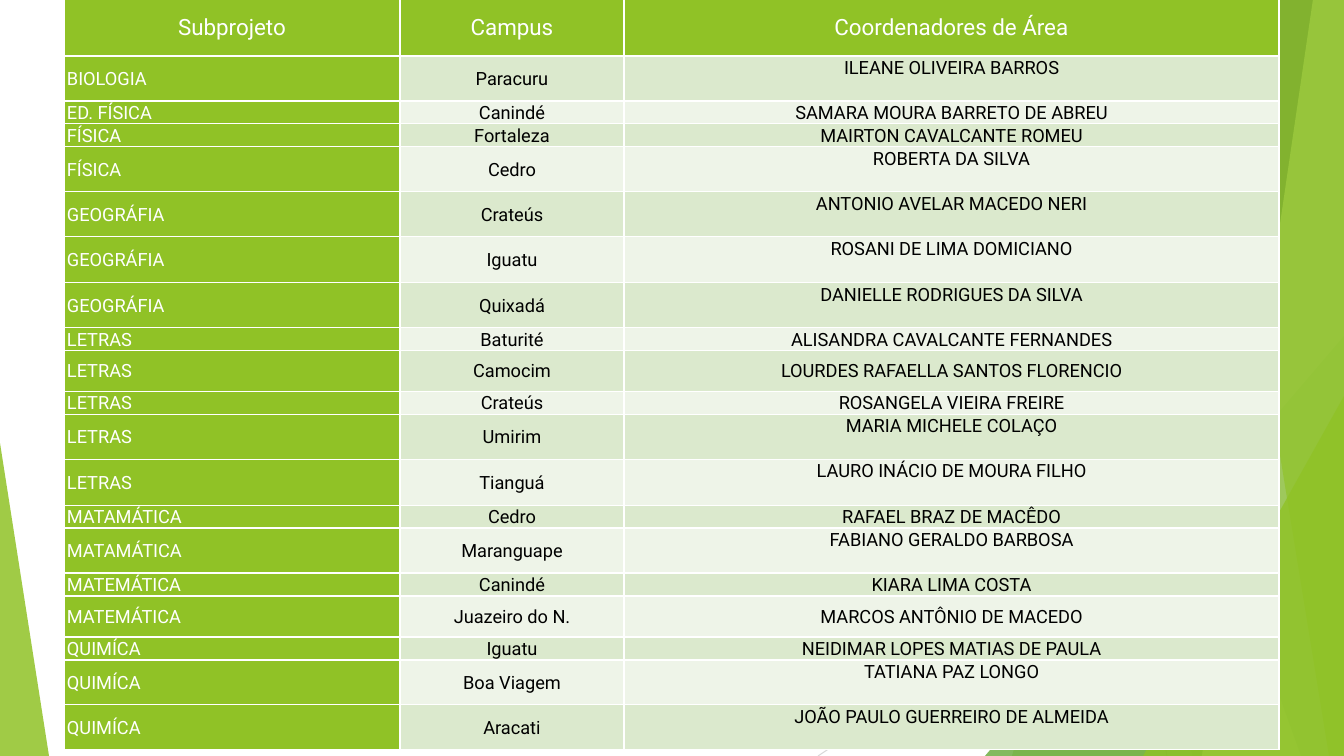
"""Build the slide listing subprojects, campuses and area coordinators."""
from lxml.etree import SubElement
from pptx import Presentation
from pptx.dml.color import RGBColor
from pptx.enum.shapes import MSO_CONNECTOR as Connector, MSO_SHAPE as Shape
from pptx.enum.text import MSO_ANCHOR as Anchor, PP_ALIGN as Align
from pptx.oxml.ns import qn
from pptx.util import Pt

HEADER = ("Subprojeto", "Campus", "Coordenadores de Área")
ROWS = [
    ("BIOLOGIA", "Paracuru", "ILEANE OLIVEIRA BARROS"),
    ("ED. FÍSICA", "Canindé", "SAMARA MOURA BARRETO DE ABREU"),
    ("FÍSICA", "Fortaleza", "MAIRTON CAVALCANTE ROMEU"),
    ("FÍSICA", "Cedro", "ROBERTA DA SILVA"),
    ("GEOGRÁFIA", "Crateús", "ANTONIO AVELAR MACEDO NERI"),
    ("GEOGRÁFIA", "Iguatu", "ROSANI DE LIMA DOMICIANO"),
    ("GEOGRÁFIA", "Quixadá", "DANIELLE RODRIGUES DA SILVA"),
    ("LETRAS", "Baturité", "ALISANDRA CAVALCANTE FERNANDES"),
    ("LETRAS", "Camocim", "LOURDES RAFAELLA SANTOS FLORENCIO"),
    ("LETRAS", "Crateús", "ROSANGELA VIEIRA FREIRE"),
    ("LETRAS", "Umirim", "MARIA MICHELE COLAÇO"),
    ("LETRAS", "Tianguá", "LAURO INÁCIO DE MOURA FILHO"),
    ("MATAMÁTICA", "Cedro", "RAFAEL BRAZ DE MACÊDO"),
    ("MATAMÁTICA", "Maranguape", "FABIANO GERALDO BARBOSA"),
    ("MATEMÁTICA", "Canindé", "KIARA LIMA COSTA"),
    ("MATEMÁTICA", "Juazeiro do N.", "MARCOS ANTÔNIO DE MACEDO"),
    ("QUIMÍCA", "Iguatu", "NEIDIMAR LOPES MATIAS DE PAULA"),
    ("QUIMÍCA", "Boa Viagem", "TATIANA PAZ LONGO"),
    ("QUIMÍCA", "Aracati", "JOÃO PAULO GUERREIRO DE ALMEIDA"),
]
ROW_EDGES = [-3, 56, 101, 124, 147, 192, 237, 283, 328, 350, 391,
             414, 459, 505, 527, 572, 595, 636, 659, 704, 749]
COLUMN_EDGES = [64, 400, 624, 1279]
TALL_ROW = 44

WIDTH, HEIGHT = 1344, 756
PX = 914400 / 100.8
GREEN, WHITE, BLACK = "90C226", "FFFFFF", "000000"
BANDS = ("DBE9CD", "EEF4E8")

LINES = [((1033, 0, 1167, HEIGHT), "BFBFBF"), ((WIDTH, 406, 818, HEIGHT), "D9D9D9")]
# Facets give top and bottom x of a slanted left edge; triangles give a box and apex.
DECORATIONS = [
    ("facet", (1238, 1012), GREEN, 30),
    ("facet", (1058, 1192), GREEN, 20),
    ("triangle", (985, 336, 359, 420, 1), "54A021", 72),
    ("facet", (1029, 1301), "3F7819", 70),
    ("facet", (1313, 1202), "C0E474", 70),
    ("facet", (1206, 1329), GREEN, 65),
    ("triangle", (1143, 396, 201, 360, 1), GREEN, 80),
    ("triangle", (0, 443, 49, 313, 0), GREEN, 85),
]


def px(*lengths):
    return [round(length * PX) for length in lengths]


def color(value):
    return RGBColor.from_string(value)


def sizes(edges):
    return [end - start for start, end in zip(edges, edges[1:])]


def add_line(slide, ends, line_color):
    line = slide.shapes.add_connector(Connector.STRAIGHT, *px(*ends))
    line.line.color.rgb = color(line_color)
    line.line.width = Pt(0.75)
    SubElement(line._element.spPr, qn("a:effectLst"))


def add_decoration(slide, kind, geometry, fill, opacity):
    if kind == "facet":
        top, bottom = geometry
        builder = slide.shapes.build_freeform(top, 0, scale=PX)
        builder.add_line_segments([(WIDTH, 0), (WIDTH, HEIGHT), (bottom, HEIGHT)])
        shape = builder.convert_to_shape()
    else:
        shape = slide.shapes.add_shape(Shape.ISOSCELES_TRIANGLE, *px(*geometry[:4]))
        shape.adjustments[0] = geometry[4]
    shape.shadow.inherit = False
    shape.line.fill.background()
    shape.fill.solid()
    shape.fill.fore_color.rgb = color(fill)
    rgb = shape._element.spPr.find(".//" + qn("a:srgbClr"))
    SubElement(rgb, qn("a:alpha"), val=str(opacity * 1000))


def add_borders(cell):
    properties = cell._tc.get_or_add_tcPr()
    for side in ("lnL", "lnR", "lnT", "lnB"):
        border = SubElement(properties, qn("a:" + side), w=str(Pt(1)))
        fill = SubElement(border, qn("a:solidFill"))
        SubElement(fill, qn("a:srgbClr"), val=WHITE)


def fill_cell(cell, text, fill, font_color, size, align, anchor):
    add_borders(cell)
    cell.fill.solid()
    cell.fill.fore_color.rgb = color(fill)
    side = px(3)[0]
    cell_format = {"margin_left": side, "margin_right": side, "margin_top": 0,
                   "margin_bottom": 0, "vertical_anchor": anchor}
    for name, value in cell_format.items():
        setattr(cell, name, value)
    paragraph = cell.text_frame.paragraphs[0]
    paragraph.alignment = align
    paragraph.line_spacing = 1.07
    run = paragraph.add_run()
    run.text = text
    for name, value in {"name": "Roboto", "size": Pt(size), "bold": False}.items():
        setattr(run.font, name, value)
    run.font.color.rgb = color(font_color)


def add_coordinator_table(slide):
    left, top = COLUMN_EDGES[0], ROW_EDGES[0]
    box = px(left, top, COLUMN_EDGES[-1] - left, ROW_EDGES[-1] - top)
    table = slide.shapes.add_table(len(ROWS) + 1, len(HEADER), *box).table
    table.first_row = table.horz_banding = False
    heights = sizes(ROW_EDGES)
    for column, width in zip(table.columns, sizes(COLUMN_EDGES)):
        column.width = px(width)[0]
    for row, height in zip(table.rows, heights):
        row.height = px(height)[0]
    for i, texts in enumerate([HEADER] + ROWS):
        for j, text in enumerate(texts):
            green = i == 0 or j == 0
            align = Align.LEFT if i and j == 0 else Align.CENTER
            raised = i and j == 2 and heights[i] >= TALL_ROW
            fill_cell(table.cell(i, j), text,
                      GREEN if green else BANDS[(i - 1) % 2],
                      WHITE if green else BLACK, 13 if i else 16,
                      align, Anchor.TOP if raised else Anchor.MIDDLE)


def main():
    presentation = Presentation()
    presentation.slide_width, presentation.slide_height = px(WIDTH, HEIGHT)
    slide = presentation.slides.add_slide(presentation.slide_layouts[6])
    for ends, line_color in LINES:
        add_line(slide, ends, line_color)
    for decoration in DECORATIONS:
        add_decoration(slide, *decoration)
    add_coordinator_table(slide)
    presentation.save("out.pptx")


if __name__ == "__main__":
    main()
